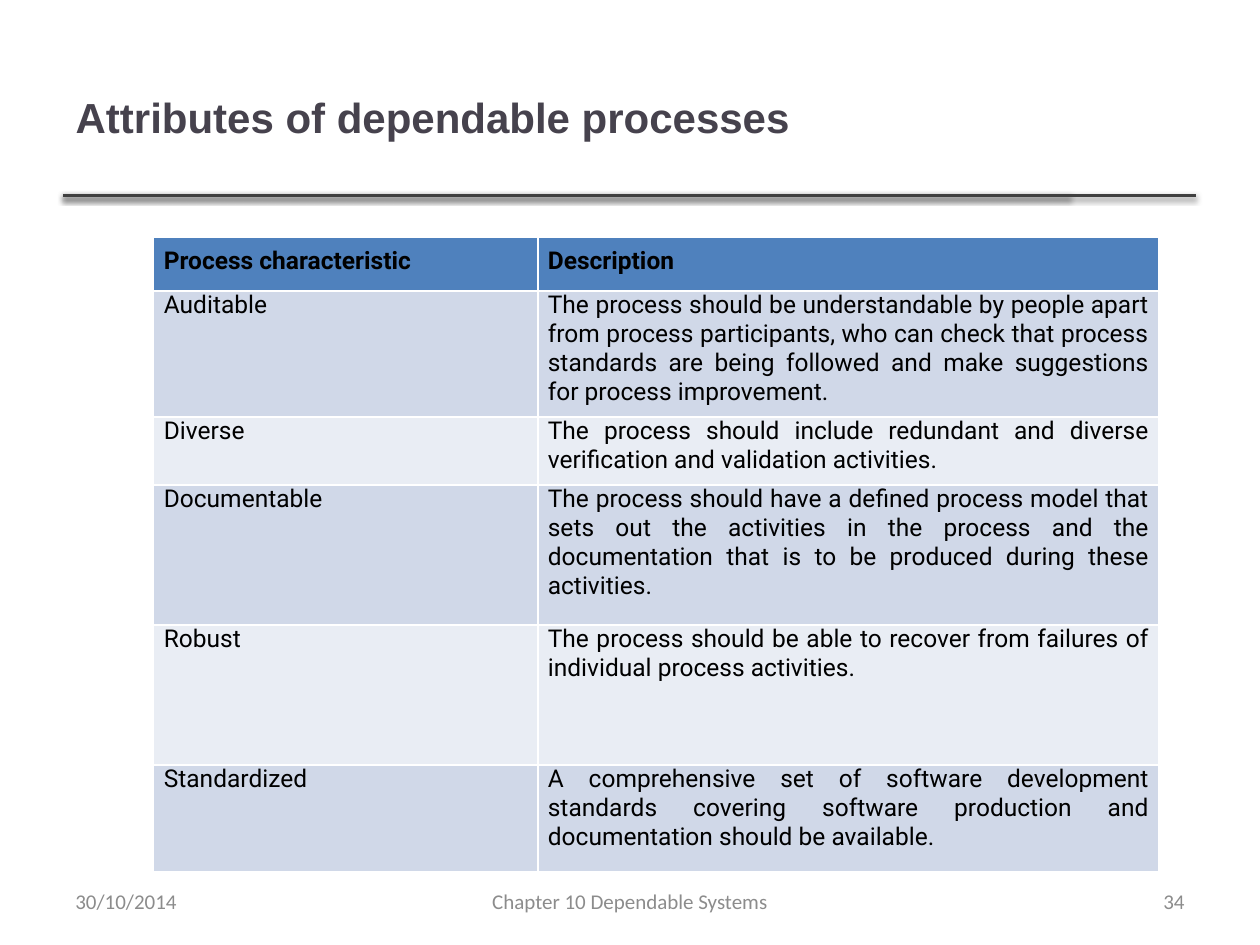
from lxml import etree
from pptx import Presentation
from pptx.dml.color import RGBColor
from pptx.enum import shapes, text
from pptx.oxml import ns
from pptx.util import Inches, Pt

HEADINGS = ("Process characteristic", "Description")
ATTRIBUTES = [
    ("Auditable", "The process should be understandable by people apart from process "
     "participants, who can check that process standards are being followed and make "
     "suggestions for process improvement."),
    ("Diverse", "The process should include redundant and diverse verification and "
     "validation activities."),
    ("Documentable", "The process should have a defined process model that sets out the "
     "activities in the process and the documentation that is to be produced during "
     "these activities."),
    ("Robust", "The process should be able to recover from failures of individual "
     "process activities."),
    ("Standardized", "A comprehensive set of software development standards covering "
     "software production and documentation should be available."),
]
ROW_HEIGHTS = (0.43, 1, 0.54, 1.11, 1.11, 0.85)
COLUMN_SHARES = (0.382, 0.618)
BANDS = ("D0D8E8", "E9EDF4")


def colour(hex_value):
    """Return the colour for a hex string."""
    return RGBColor.from_string(hex_value)


def add_run(paragraph, words, font, size, hex_value, bold=False):
    """Append one formatted run to a paragraph."""
    run = paragraph.add_run()
    run.text = words
    run.font.name = font
    run.font.size = Pt(size)
    run.font.bold = bold
    run.font.color.rgb = colour(hex_value)


def add_rule(slide, left, top, width):
    """Draw a horizontal rule with a soft shadow below it."""
    rule = slide.shapes.add_connector(
        shapes.MSO_CONNECTOR.STRAIGHT,
        Inches(left), Inches(top), Inches(left + width), Inches(top))
    rule.line.color.rgb = colour("404040")
    rule.line.width = Pt(2)
    effects = etree.SubElement(rule._element.spPr, ns.qn("a:effectLst"))
    shadow = etree.SubElement(effects, ns.qn("a:outerShdw"), blurRad=str(Pt(3.1)),
                              dist=str(Pt(1.6)), dir="5400000", rotWithShape="0")
    black = etree.SubElement(shadow, ns.qn("a:srgbClr"), val="000000")
    etree.SubElement(black, ns.qn("a:alpha"), val="38000")


def add_heading(slide, left, top, width, height):
    """Place the title with the two overlapping rules along its foot."""
    for rule_width in (width, width + 1):
        add_rule(slide, left, top + height, rule_width)
    title = slide.shapes.title
    title.left, title.top = Inches(left), Inches(top)
    title.width, title.height = Inches(width), Inches(height)
    title.text_frame.vertical_anchor = text.MSO_ANCHOR.MIDDLE
    paragraph = title.text_frame.paragraphs[0]
    paragraph.alignment = text.PP_ALIGN.LEFT
    add_run(paragraph, "Attributes of dependable processes", "Arial", 24, "46424D", True)


def fill_cell(cell, words, fill, is_heading):
    """Write and format one table cell."""
    cell.fill.solid()
    cell.fill.fore_color.rgb = colour(fill)
    cell.margin_left = cell.margin_right = cell.margin_bottom = Inches(0.08)
    cell.margin_top = Inches(0.08 if is_heading else 0)
    paragraph = cell.text_frame.paragraphs[0]
    paragraph.alignment = text.PP_ALIGN.JUSTIFY
    add_run(paragraph, words, "Roboto", 14, "000000", is_heading)


def add_attribute_table(slide, left, top, width):
    """Build the banded table of process attributes."""
    rows = [HEADINGS, *ATTRIBUTES]
    table = slide.shapes.add_table(
        len(rows), len(HEADINGS), Inches(left), Inches(top),
        Inches(width), Inches(sum(ROW_HEIGHTS))).table
    for column, share in zip(table.columns, COLUMN_SHARES):
        column.width = Inches(width * share)
    for index, (row, height, entries) in enumerate(zip(table.rows, ROW_HEIGHTS, rows)):
        row.height = Inches(height)
        fill = BANDS[(index - 1) % 2] if index else "4F81BD"
        for cell, words in zip(row.cells, entries):
            fill_cell(cell, words, fill, index == 0)


def add_footer(slide, left, top, width, height):
    """Place the date, chapter and page number across the footer."""
    align = text.PP_ALIGN
    parts = [
        ("30/10/2014", 0, 2.33, align.LEFT),
        ("Chapter 10 Dependable Systems", (width - 3.17) / 2, 3.17, align.CENTER),
        ("34", width - 2.33, 2.33, align.RIGHT),
    ]
    for words, offset, part_width, alignment in parts:
        frame = slide.shapes.add_textbox(
            Inches(left + offset), Inches(top),
            Inches(part_width), Inches(height)).text_frame
        frame.word_wrap = True
        frame.vertical_anchor = text.MSO_ANCHOR.MIDDLE
        paragraph = frame.paragraphs[0]
        paragraph.alignment = alignment
        add_run(paragraph, words, "Calibri", 12, "8C8C8C")


def main():
    """Build and save the slide."""
    deck = Presentation()
    deck.slide_width, deck.slide_height = Inches(10), Inches(7.5)
    slide = deck.slides.add_slide(deck.slide_layouts[5])
    add_heading(slide, 0.5, 0.3, 7.99, 1.25)
    add_attribute_table(slide, 1.22, 1.88, 7.98)
    add_footer(slide, 0.5, 6.95, 9, 0.4)
    deck.save("out.pptx")


if __name__ == "__main__":
    main()
